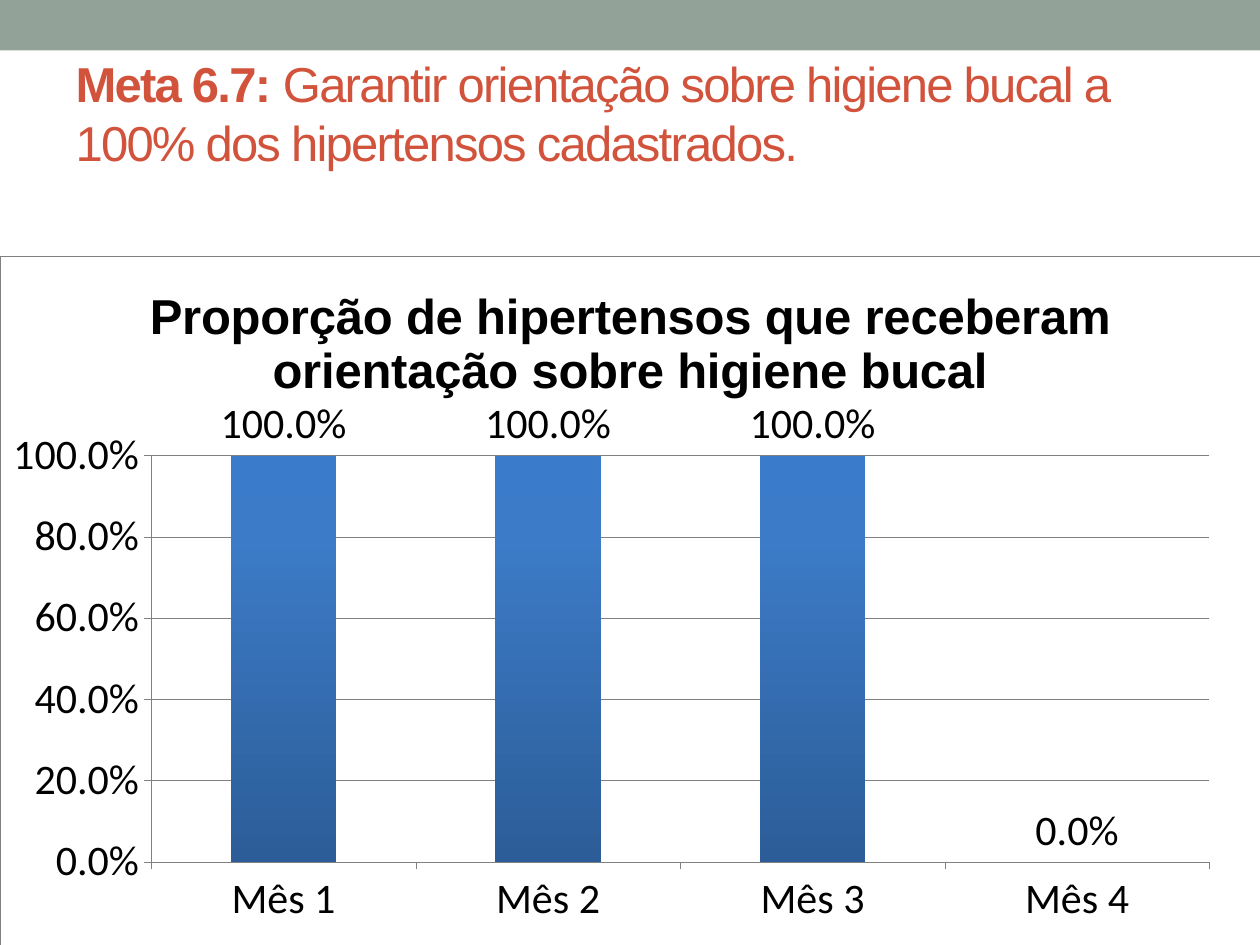
from lxml.etree import SubElement
from pptx import Presentation
from pptx.chart.data import CategoryChartData
from pptx.dml.color import RGBColor
from pptx.enum.chart import XL_CHART_TYPE, XL_LABEL_POSITION, XL_TICK_MARK
from pptx.enum.shapes import MSO_SHAPE
from pptx.enum.text import MSO_ANCHOR, MSO_AUTO_SIZE, PP_ALIGN
from pptx.oxml import parse_xml
from pptx.oxml.ns import nsdecls, qn
from pptx.util import Inches, Pt

COLORS = {"band": "93A299", "title": "D2533C", "text": "000000",
          "line": "808080", "paper": "FFFFFF"}
BAR_STOPS = [(0, "3A7CCB"), (20, "3C7BC7"), (100, "2C5D98")]
CHART_TITLE = "Proporção de hipertensos que receberam orientação sobre higiene bucal"


def rgb(name):
    return RGBColor.from_string(COLORS[name])


def set_font(font, size, color="text", name="Calibri", bold=False):
    font.size, font.name, font.bold = Pt(size), name, bold
    font.color.rgb = rgb(color)


def add_run(p, text, spacing=None, **fmt):
    r = p.add_run()
    r.text = text
    set_font(r.font, **fmt)
    if spacing is not None:
        r.font._element.set("spc", str(int(spacing * 100)))


def area_props(with_line):
    line = (f'<a:ln w="3175"><a:solidFill><a:srgbClr val="{COLORS["line"]}"/></a:solidFill></a:ln>'
            if with_line else "<a:ln><a:noFill/></a:ln>")
    return parse_xml(f'<c:spPr {nsdecls("c", "a")}><a:solidFill><a:srgbClr val="{COLORS["paper"]}"/>'
                     f"</a:solidFill>{line}</c:spPr>")


class SlideBuilder:
    def __init__(self, prs):
        self.s = prs.slides.add_slide(prs.slide_layouts[5])

    def band(self, x, y, w, h):
        sp = self.s.shapes.add_shape(MSO_SHAPE.RECTANGLE, Inches(x), Inches(y), Inches(w), Inches(h))
        sp.shadow.inherit = False
        sp.fill.solid()
        sp.fill.fore_color.rgb = rgb("band")
        sp.line.fill.background()

    def title(self, x, y, w, h, parts):
        sp = self.s.shapes.title
        sp.left, sp.top, sp.width, sp.height = Inches(x), Inches(y), Inches(w), Inches(h)
        tf = sp.text_frame
        tf.word_wrap, tf.auto_size = True, MSO_AUTO_SIZE.NONE
        tf.vertical_anchor = MSO_ANCHOR.MIDDLE
        tf.margin_bottom = Inches(0.5)
        p = tf.paragraphs[0]
        p.alignment = PP_ALIGN.LEFT
        for text, bold in parts:
            add_run(p, text, spacing=-1, size=28, color="title", name="Arial", bold=bold)

    def column_chart(self, x, y, w, h, title, cats, vals, plot):
        data = CategoryChartData(number_format="0.0%")
        data.categories = cats
        data.add_series(title, vals)
        chart = self.s.shapes.add_chart(XL_CHART_TYPE.COLUMN_CLUSTERED, Inches(x), Inches(y),
                                        Inches(w), Inches(h), data).chart
        set_font(chart.font, 10)
        chart.has_legend = False
        chart.has_title = True
        add_run(chart.chart_title.text_frame.paragraphs[0], title, size=28, name="Arial", bold=True)
        chart.chart_title.include_in_layout = False
        for axis in (chart.category_axis, chart.value_axis):
            self.axis(axis)
        axis = chart.value_axis
        axis.minimum_scale, axis.maximum_scale, axis.major_unit = 0, 1, 0.2
        axis.tick_labels.number_format = "0.0%"
        axis.tick_labels.number_format_is_linked = False
        axis.has_major_gridlines = True
        self.line(axis.major_gridlines.format.line)
        self.columns(chart.plots[0])
        self.areas(chart, plot)

    def line(self, line):
        line.color.rgb, line.width = rgb("line"), Pt(0.25)

    def axis(self, axis):
        axis.major_tick_mark = XL_TICK_MARK.OUTSIDE
        set_font(axis.tick_labels.font, 24)
        self.line(axis.format.line)

    def columns(self, plot):
        plot.gap_width, plot.vary_by_categories = 150, False
        plot.has_data_labels = True
        labels = plot.data_labels
        labels.show_value = True
        labels.position = XL_LABEL_POSITION.OUTSIDE_END
        labels.number_format, labels.number_format_is_linked = "0.0%", False
        set_font(labels.font, 24)
        series = plot.series[0]
        series.invert_if_negative = False
        series.format.fill.gradient()
        grad = series.format.fill._fill._gradFill
        for child in list(grad):
            grad.remove(child)
        stops = SubElement(grad, qn("a:gsLst"))
        for pos, color in BAR_STOPS:
            stop = SubElement(stops, qn("a:gs"), pos=str(pos * 1000))
            SubElement(stop, qn("a:srgbClr"), val=color)
        SubElement(grad, qn("a:lin"), ang="5400000", scaled="0")

    def areas(self, chart, plot):
        space = chart._chartSpace
        space.chart.addnext(area_props(True))
        area = space.chart.plotArea
        area.append(area_props(False))
        for old in area.findall(qn("c:layout")):
            area.remove(old)
        sides = "".join(f'<c:{k} val="{v}"/>' for k, v in zip("xywh", plot))
        modes = '<c:layoutTarget val="inner"/><c:xMode val="edge"/><c:yMode val="edge"/>'
        area.insert(0, parse_xml(f'<c:layout {nsdecls("c")}><c:manualLayout>{modes}{sides}'
                                 "</c:manualLayout></c:layout>"))


def main():
    prs = Presentation()
    prs.slide_width, prs.slide_height = Inches(10), Inches(7.5)
    slide = SlideBuilder(prs)
    slide.band(0, 0, 10, 0.4)
    slide.title(0.5, 0.58, 9, 1.08, [
        ("Meta 6.7:", True),
        (" Garantir orientação sobre higiene bucal a 100% dos hipertensos cadastrados.", False)])
    slide.column_chart(0, 2.03, 10, 5.47, CHART_TITLE, [f"Mês {n}" for n in range(1, 5)],
                       (1, 1, 1, 0), plot=(0.12, 0.29, 0.84, 0.59))
    prs.save("out.pptx")


if __name__ == "__main__":
    main()
